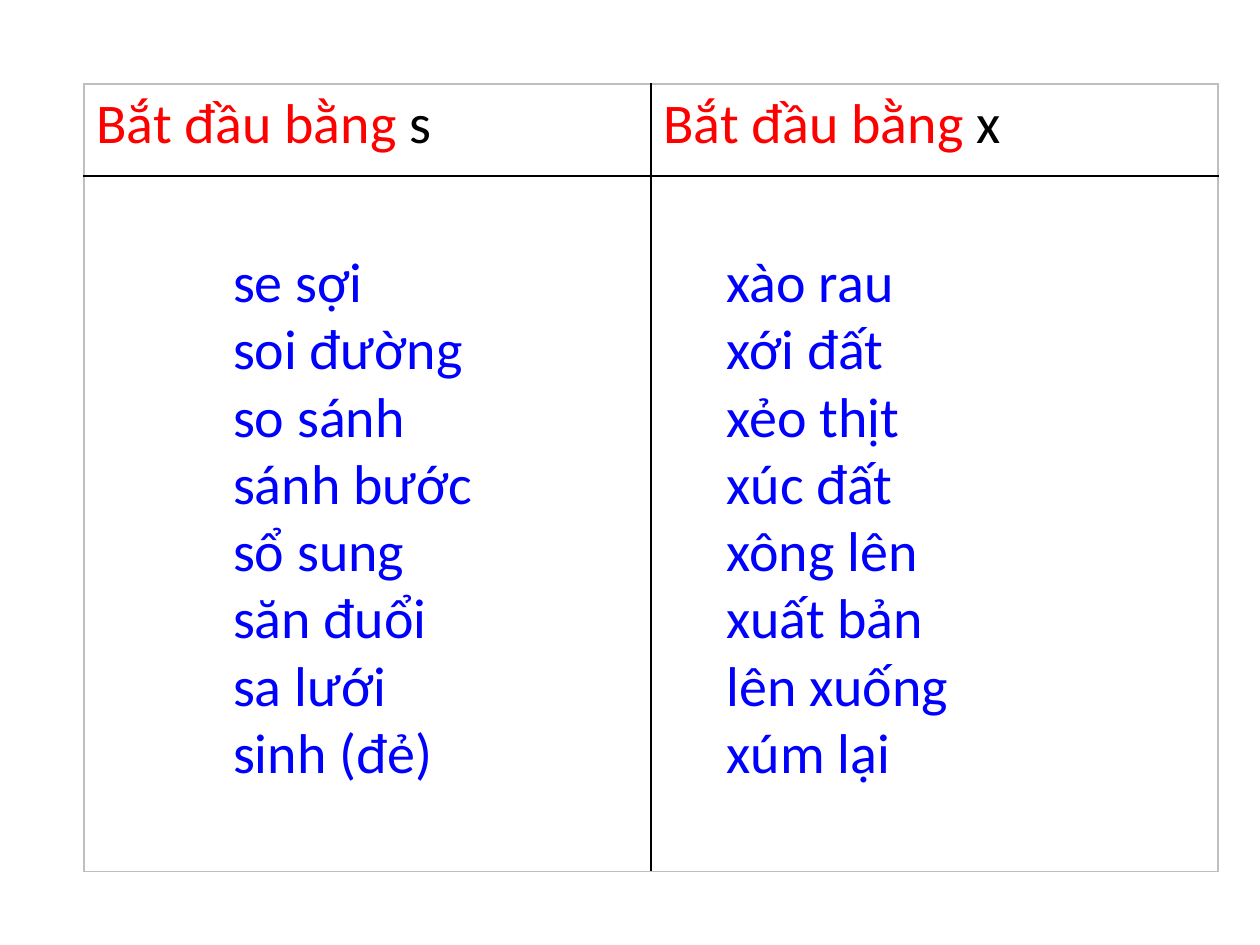
from lxml import etree
from pptx import Presentation
from pptx import util as u
from pptx.dml.color import RGBColor
from pptx.enum import text
from pptx.oxml import ns

BLACK, RED, BLUE, GREY = "000000", "FF0000", "0000FF", "BFBFBF"


def colour(value):
    return RGBColor.from_string(value)


class Page:
    """Holds the text style and the current slide."""

    font = {"name": "Calibri", "size": u.Pt(32), "bold": False}

    def __init__(self, deck):
        self.slide = deck.slides.add_slide(deck.slide_layouts[6])

    def span(self, para, words, shade):
        span = para.add_run()
        span.text = words
        for name, value in self.font.items():
            setattr(span.font, name, value)
        span.font.color.rgb = colour(shade)

    def word_list(self, left, top, width, height, words):
        box = self.slide.shapes.add_textbox(*map(u.Cm, (left, top, width, height)))
        frame = box.text_frame
        layout = {"word_wrap": True, "auto_size": text.MSO_AUTO_SIZE.SHAPE_TO_FIT_TEXT}
        for name, value in layout.items():
            setattr(frame, name, value)
        for index, word in enumerate(words):
            para = frame.add_paragraph() if index else frame.paragraphs[0]
            self.span(para, word, BLUE)

    def table(self, left, top, widths, heights):
        size = map(u.Cm, (left, top, sum(widths), sum(heights)))
        table = self.slide.shapes.add_table(len(heights), len(widths), *size).table
        for name in ("first_row", "horz_banding"):
            setattr(table, name, False)
        for column, width in zip(table.columns, widths):
            column.width = u.Cm(width)
        for row, height in zip(table.rows, heights):
            row.height = u.Cm(height)
        # Black lines inside, grey lines around
        for r in range(len(heights)):
            for c in range(len(widths)):
                cell = table.cell(r, c)
                self.borders(cell, {
                    "lnL": BLACK if c else GREY,
                    "lnR": BLACK if c < len(widths) - 1 else GREY,
                    "lnT": BLACK if r else GREY,
                    "lnB": BLACK if r < len(heights) - 1 else GREY,
                })
                cell.fill.background()
        return table

    def borders(self, cell, shades):
        properties = cell._tc.get_or_add_tcPr()
        for side, shade in shades.items():
            line = etree.SubElement(properties, ns.qn("a:" + side), w=str(u.Pt(1)))
            fill = etree.SubElement(line, ns.qn("a:solidFill"))
            etree.SubElement(fill, ns.qn("a:srgbClr"), val=shade)


def main():
    deck = Presentation()
    deck.slide_width, deck.slide_height = u.Cm(25.4), u.Cm(19.05)
    page = Page(deck)

    # Table with one heading per initial letter
    table = page.table(1.69, 1.69, (11.43, 11.43), (1.86, 14.02))
    for column, letter in enumerate("sx"):
        para = table.cell(0, column).text_frame.paragraphs[0]
        page.span(para, "Bắt đầu bằng ", RED)
        page.span(para, letter, BLACK)

    # Word lists over the lower cells
    lists = {
        4.45: ("se sợi", "soi đường", "so sánh", "sánh bước",
               "sổ sung", "săn đuổi", "sa lưới", "sinh (đẻ)"),
        14.4: ("xào rau", "xới đất", "xẻo thịt", "xúc đất",
               "xông lên", "xuất bản", "lên xuống", "xúm lại"),
    }
    for left, words in lists.items():
        page.word_list(left, 4.85, 6.55, 11.2, words)

    deck.save("out.pptx")


if __name__ == "__main__":
    main()
